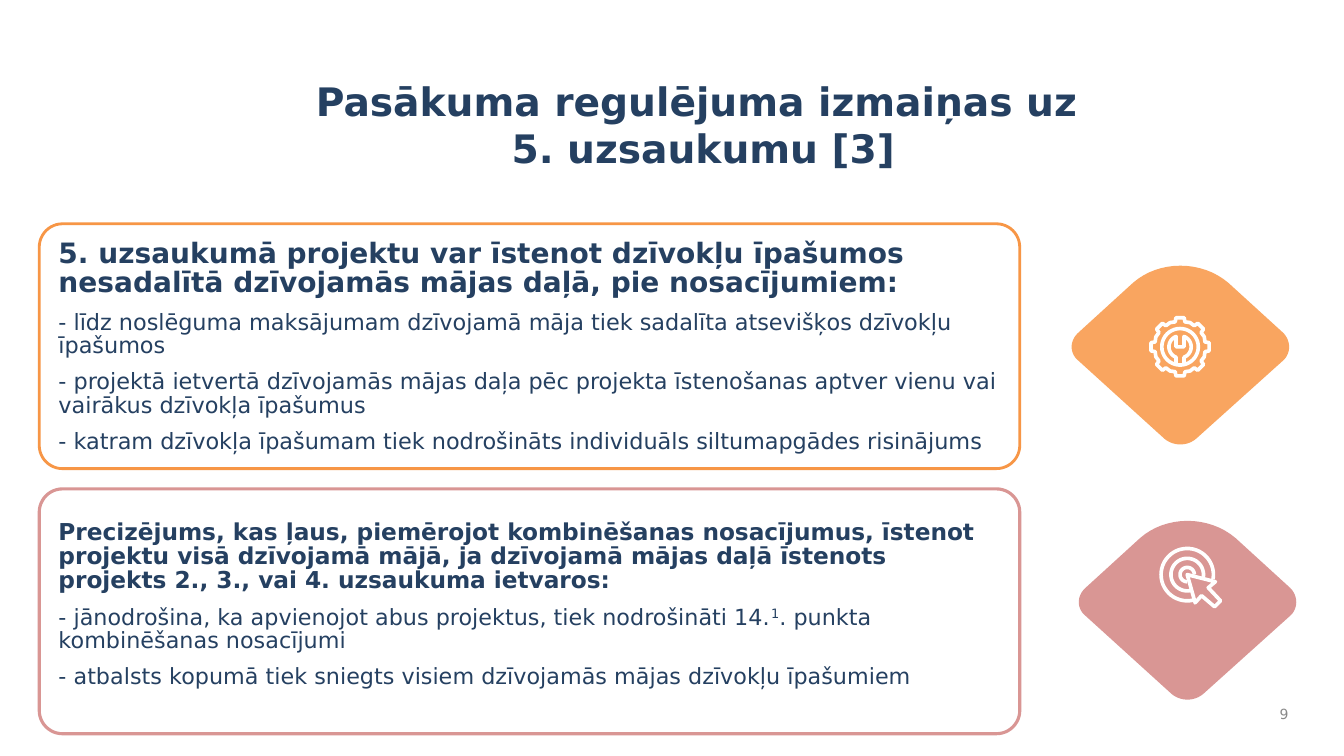
import math
from lxml import etree
from pptx import Presentation
from pptx import util as u
from pptx.dml.color import RGBColor
from pptx.enum import shapes, text
from pptx.oxml.ns import qn

NAVY, ORANGE, ROSE, WHITE = "254061", "F79646", "D99694", "FFFFFF"
HEADING = "Pasākuma regulējuma izmaiņas uz ", "5. uzsaukumu [3]"
PROJECT_RULES = [
    "5. uzsaukumā projektu var īstenot dzīvokļu īpašumos nesadalītā dzīvojamās mājas daļā, pie nosacījumiem:",
    "- līdz noslēguma maksājumam dzīvojamā māja tiek sadalīta atsevišķos dzīvokļu īpašumos",
    "- projektā ietvertā dzīvojamās mājas daļa pēc projekta īstenošanas aptver vienu vai vairākus dzīvokļa īpašumus",
    "- katram dzīvokļa īpašumam tiek nodrošināts individuāls siltumapgādes risinājums",
]
COMBINING_RULES = [
    "Precizējums, kas ļaus, piemērojot kombinēšanas nosacījumus, īstenot projektu visā dzīvojamā mājā, "
    "ja dzīvojamā mājas daļā īstenots projekts 2., 3., vai 4. uzsaukuma ietvaros:",
    "- jānodrošina, ka apvienojot abus projektus, tiek nodrošināti 14.^1^. punkta kombinēšanas nosacījumi",
    "- atbalsts kopumā tiek sniegts visiem dzīvojamās mājas dzīvokļu īpašumiem",
]
DIAMOND_CORNERS = [
    [(2.39, 4.5), (2.62, 4.7), (2.97, 4.7), (3.2, 4.5)],
    [(5.38, 2.54), (5.59, 2.36), (5.59, 2.03), (5.38, 1.83)],
    [(4.01, 0.58), (3.33, 0), (2.26, 0), (1.6, 0.58)],
    [(0.23, 1.83), (0, 2.03), (0, 2.36), (0.23, 2.54)],
]
CURSOR = [(0, 0), (0.71, 0.18), (0.53, 0.33), (0.84, 0.66), (0.69, 0.81), (0.36, 0.53), (0.2, 0.71)]


def color(value):
    return RGBColor.from_string(value)


def apply(target, values):
    for name, value in values.items():
        setattr(target, name, value)


def polar(radius, degrees):
    angle = math.radians(degrees)
    return radius * math.cos(angle), radius * math.sin(angle)


def arc(radius, start, end, steps=40):
    return [polar(radius, start + (end - start) * i / steps) for i in range(steps + 1)]


def bezier(corner, steps=16):
    for i in range(steps + 1):
        t = i / steps
        weights = (1 - t) ** 3, 3 * t * (1 - t) ** 2, 3 * t * t * (1 - t), t ** 3
        yield tuple(sum(w * point[axis] for w, point in zip(weights, corner)) for axis in (0, 1))


class Slide:
    font = "DejaVu Sans"

    def __init__(self, deck):
        self.page = deck.slides.add_slide(deck.slide_layouts[3])
        self.holders = list(self.page.placeholders)

    def paint(self, shape, fill=None, line=None, width=2):
        shape.shadow.inherit = False
        if fill:
            shape.fill.solid()
            shape.fill.fore_color.rgb = color(fill)
        else:
            shape.fill.background()
        if line:
            shape.line.color.rgb = color(line)
            shape.line.width = u.Pt(width)
        else:
            shape.line.fill.background()

    def place(self, index, at):
        holder = self.holders[index]
        apply(holder, dict(zip(("left", "top", "width", "height"), map(u.Cm, at))))
        self.page.shapes._spTree.append(holder._element)
        frame = holder.text_frame
        apply(frame, {"word_wrap": True, "auto_size": text.MSO_AUTO_SIZE.NONE,
                      "vertical_anchor": text.MSO_ANCHOR.TOP})
        return frame

    def add_words(self, para, words, size, bold=False, tint=NAVY):
        for i, part in enumerate(words.split("^")):
            span = para.add_run()
            span.text = part
            apply(span.font, {"name": self.font, "size": u.Pt(size), "bold": bold})
            span.font.color.rgb = color(tint)
            if i % 2:
                span._r.get_or_add_rPr().set("baseline", "30000")

    def title(self, lines, at):
        frame = self.place(0, at)
        for i, line in enumerate(lines):
            para = frame.add_paragraph() if i else frame.paragraphs[0]
            para.alignment = text.PP_ALIGN.CENTER
            self.add_words(para, line, 28, True)

    def rules(self, index, lines, at, lead_size, size):
        frame = self.place(index, at)
        for i, line in enumerate(lines):
            para = frame.add_paragraph() if i else frame.paragraphs[0]
            props = para._p.get_or_add_pPr()
            apply(para, {"line_spacing": 0.87, "space_after": u.Pt(6),
                         "space_before": u.Pt(0.2 * size if i else 0)})
            props.set("marL", "0")
            props.set("indent", "0")
            etree.SubElement(props, qn("a:buNone"))
            self.add_words(para, line, size if i else lead_size, not i)

    def number(self, words, at):
        frame = self.page.shapes.add_textbox(*map(u.Cm, at)).text_frame
        apply(frame, {"word_wrap": True, "vertical_anchor": text.MSO_ANCHOR.MIDDLE})
        para = frame.paragraphs[0]
        para.alignment = text.PP_ALIGN.RIGHT
        self.add_words(para, words, 10, tint="898989")

    def panel(self, top, line, width, fill=None):
        box = self.page.shapes.add_shape(
            shapes.MSO_SHAPE.ROUNDED_RECTANGLE, *map(u.Cm, (0.99, top, 24.71, 6.17)))
        box.adjustments[0] = 0.095
        self.paint(box, fill, line, width)

    def outline(self, center, points, close=True, **style):
        spots = [(u.Cm(center[0] + x), u.Cm(center[1] + y)) for x, y in points]
        builder = self.page.shapes.build_freeform(*spots[0])
        builder.add_line_segments(spots[1:], close=close)
        self.paint(builder.convert_to_shape(), **style)

    def diamond(self, corner, fill):
        self.outline(corner, [point for curve in DIAMOND_CORNERS for point in bezier(curve)], fill=fill)

    def gear(self, center):
        stroke = {"line": WHITE, "width": 2.6}
        tooth = [(0.64, -11), (0.74, -8), (0.74, 8), (0.64, 11), (0.66, 22.5)]
        self.outline(center, [polar(radius, turn + offset) for turn in range(0, 360, 45)
                              for radius, offset in tooth], **stroke)
        self.outline(center, arc(0.46, 0, 360), **stroke)
        wrench = [(-0.1, 0.43), *arc(0.28, 111, 249), (-0.1, 0), (0.1, 0),
                  *arc(0.28, -69, 69), (0.1, 0.43)]
        self.outline(center, wrench, close=False, **stroke)

    def target(self, center):
        stroke = {"line": WHITE, "width": 2.6}
        for radius, start, end in [(0.66, 77, 370), (0.41, 78, 370), (0.18, 90, 360)]:
            self.outline(center, arc(radius, start, end), close=False, **stroke)
        self.outline(center, CURSOR, **stroke)


def main():
    deck = Presentation()
    apply(deck, {"slide_width": u.Cm(33.87), "slide_height": u.Cm(19.05)})
    slide = Slide(deck)
    slide.panel(5.64, ORANGE, 2, WHITE)
    slide.rules(1, PROJECT_RULES, (1.22, 5.92, 25.1, 5.64), 20, 16)
    slide.number("9", (31.6, 17.58, 1.12, 0.84))
    slide.title(HEADING, (4.22, 1.83, 27, 2.64))
    slide.rules(2, COMBINING_RULES, (1.22, 13, 23.57, 5.89), 16.6, 15.9)
    slide.diamond((26.95, 6.55), "F9A560")
    slide.diamond((27.13, 12.98), ROSE)
    slide.gear((29.74, 8.74))
    slide.target((29.92, 14.48))
    slide.panel(12.32, ROSE, 2.25)
    deck.save("out.pptx")


if __name__ == "__main__":
    main()
